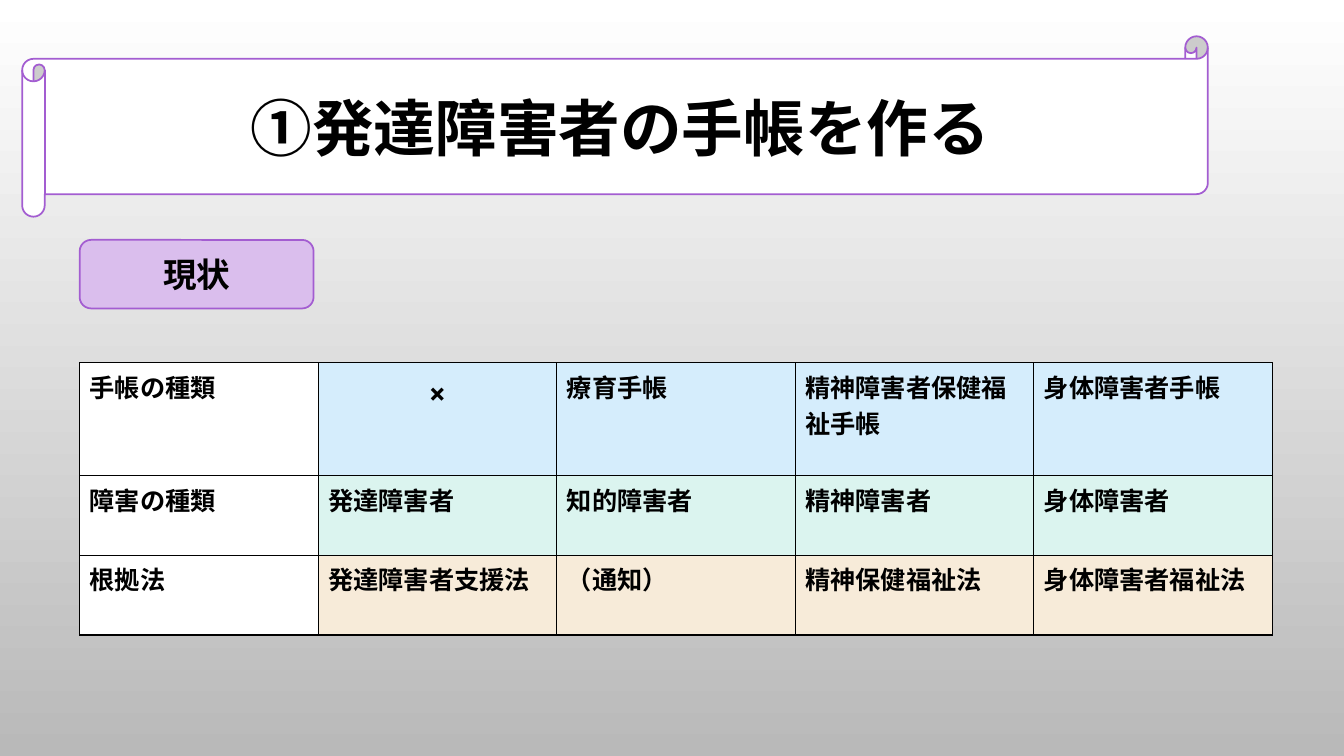
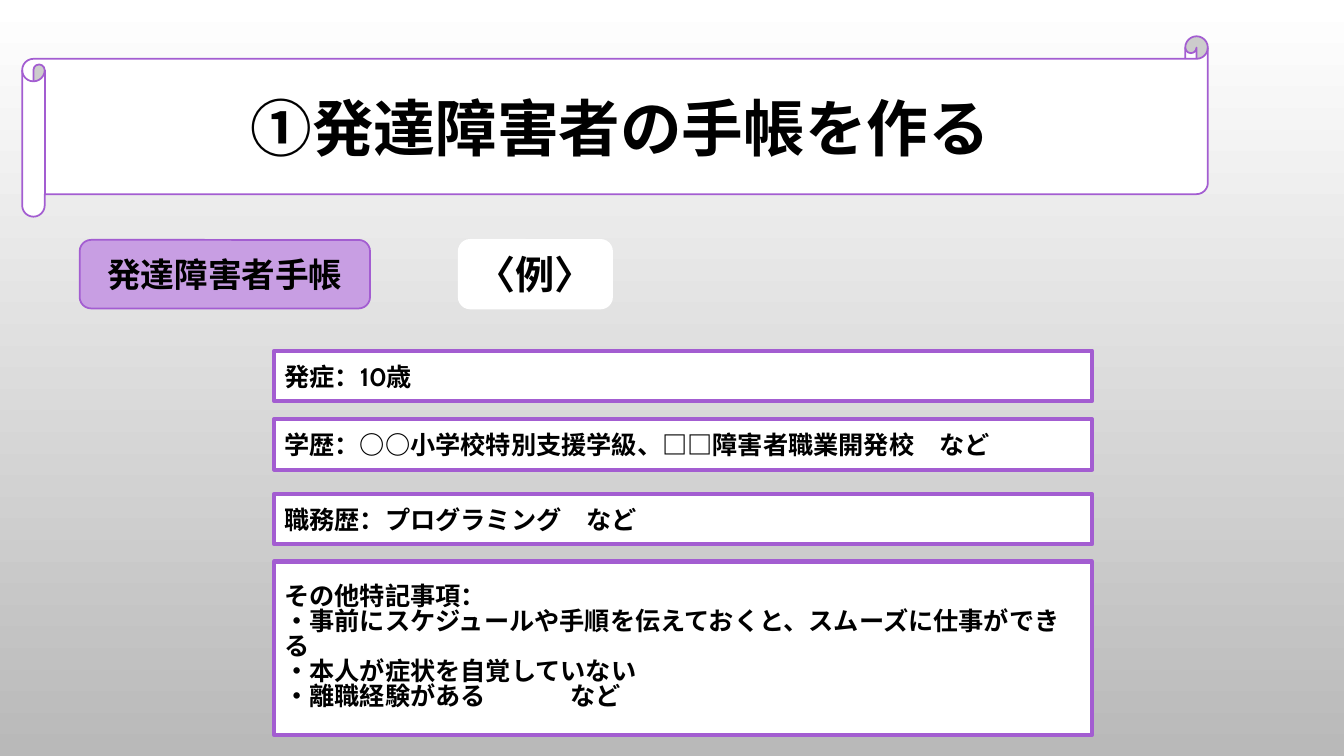
from lxml import etree
from pptx import Presentation
from pptx import util as u
from pptx.dml.color import RGBColor
from pptx.enum import shapes, text
from pptx.oxml import ns

PX = 9144
HUES = {
    "ink": "000000", "white": "FFFFFF", "gray": "B9B9B9", "edge": "A35DD1",
    "pale": "DABEED", "deep": "C89EE3", "sky": "D5EDFC", "mint": "DBF4EF",
    "sand": "F7EBD9",
}
LATIN, ASIAN = "Cabin", "Noto Sans CJK JP"
KIND = shapes.MSO_SHAPE
MID, LEFT = text.PP_ALIGN.CENTER, text.PP_ALIGN.LEFT

TITLE = "①発達障害者の手帳を作る"
GRID = [
    ("sky", 112, ["手帳の種類", "×", "療育手帳", "精神障害者保健福祉手帳", "身体障害者手帳"]),
    ("mint", 79, ["障害の種類", "発達障害者", "知的障害者", "精神障害者", "身体障害者"]),
    ("sand", 79, ["根拠法", "発達障害者支援法", "（通知）", "精神保健福祉法", "身体障害者福祉法"]),
]
FACTS = [
    (0, 50, ["発症：10歳"]),
    (68, 50, ["学歴：○○小学校特別支援学級、□□障害者職業開発校　など"]),
    (142, 50, ["職務歴：プログラミング　など"]),
    (209, 172, ["その他特記事項：",
                "・事前にスケジュールや手順を伝えておくと、スムーズに仕事ができる",
                "・本人が症状を自覚していない",
                "・離職経験がある\tなど"]),
]
TAB = 284


def px(*nums):
    return [u.Emu(n * PX) for n in nums]


def hue(name):
    return RGBColor.from_string(HUES[name])


def tint(fill, name):
    fill.solid()
    fill.fore_color.rgb = hue(name)


def sub(node, tag, **attrs):
    return etree.SubElement(node, ns.qn(tag), **attrs)


def write(frame, lines, size, align=LEFT, face=LATIN):
    frame.word_wrap = True
    for i, line in enumerate(lines):
        para = frame.paragraphs[0] if i == 0 else frame.add_paragraph()
        para.alignment = align
        if len(lines) > 1:
            para.line_spacing = 0.83
        if "\t" in line:
            tabs = sub(para._p.get_or_add_pPr(), "a:tabLst")
            sub(tabs, "a:tab", pos=str(TAB * PX), algn="l")
        run = para.add_run()
        run.text = line
        font = run.font
        font.size, font.bold, font.name = u.Pt(size), True, face
        font.color.rgb = hue("ink")
        sub(run._r.get_or_add_rPr(), "a:ea", typeface=ASIAN)


def panel(slide, kind, box, lines, size, fill="white", edge="edge",
          width=1.25, align=MID, face=LATIN):
    shape = slide.shapes.add_shape(kind, *px(*box))
    shape.shadow.inherit = False
    tint(shape.fill, fill)
    shape.line.color.rgb = hue(edge)
    shape.line.width = u.Pt(width)
    shape.text_frame.vertical_anchor = text.MSO_ANCHOR.MIDDLE
    write(shape.text_frame, lines, size, align, face)


def label(slide, x, w, line, fill, **style):
    style = {"size": 24, **style}
    panel(slide, KIND.ROUNDED_RECTANGLE, (x, 238, w, 68), [line], fill=fill, **style)


def border(cell):
    props = cell._tc.get_or_add_tcPr()
    for side in "LRTB":
        line = sub(props, f"a:ln{side}", w=str(u.Pt(1)))
        sub(sub(line, "a:solidFill"), "a:srgbClr", val=HUES["ink"])


def chart(slide, x, y, w):
    high = sum(row[1] for row in GRID)
    cols = len(GRID[0][2])
    table = slide.shapes.add_table(len(GRID), cols, *px(x, y, w, high)).table
    table.first_row = table.horz_banding = False
    for col in table.columns:
        col.width = u.Emu(w * PX // cols)
    for r, (fill, tall, words) in enumerate(GRID):
        table.rows[r].height = px(tall)[0]
        for c, word in enumerate(words):
            cell = table.cell(r, c)
            border(cell)
            tint(cell.fill, fill if c else "white")
            cross = word == "×"
            write(cell.text_frame, [word], 28 if cross else 18, MID if cross else LEFT)


def facts(slide, x, y, w):
    for top, high, lines in FACTS:
        panel(slide, KIND.FLOWCHART_PROCESS, (x, y + top, w, high), lines, 18,
              width=3, align=LEFT)


def page(deck):
    slide = deck.slides.add_slide(deck.slide_layouts[6])
    panel(slide, KIND.HORIZONTAL_SCROLL, (22, 36, 1176, 179), [TITLE], 44, face=ASIAN)
    return slide


def paint(deck):
    fill = deck.slide_master.background.fill
    fill.gradient()
    fill.gradient_angle = 270
    for stop, name in zip(fill.gradient_stops, ("white", "gray")):
        stop.color.rgb = hue(name)


def main():
    deck = Presentation()
    deck.slide_width, deck.slide_height = px(1333, 750)
    paint(deck)

    state = page(deck)
    label(state, 79, 232, "現状", "pale")
    chart(state, 79, 360, 1183)

    sample = page(deck)
    label(sample, 79, 288, "発達障害者手帳", "deep")
    label(sample, 455, 152, "〈例〉", "white", edge="white", size=28, face=ASIAN)
    facts(sample, 272, 348, 811)

    deck.save("out.pptx")


if __name__ == "__main__":
    main()
